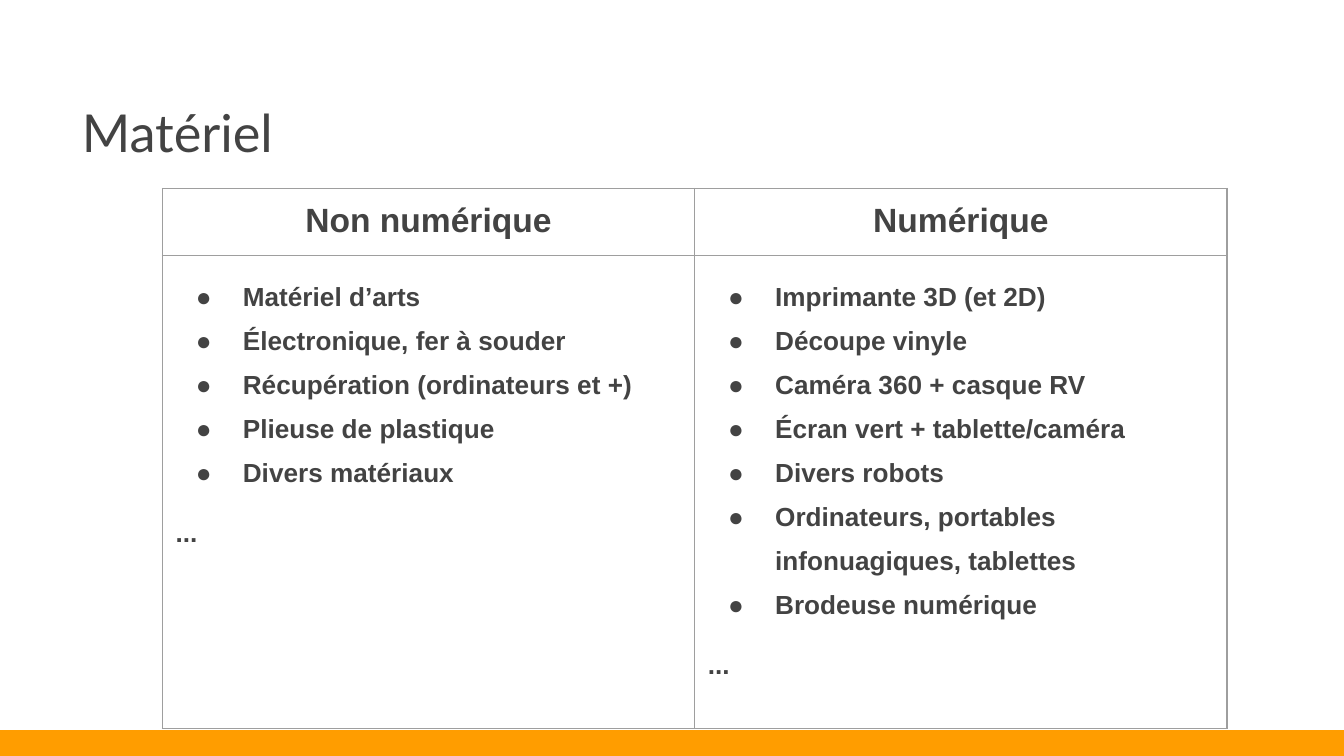
import pptx
import pptx.dml.color
import pptx.enum.shapes
import pptx.enum.text
import pptx.oxml
import pptx.oxml.ns
import pptx.util
from pptx.util import Cm, Pt

TITLE = "Matériel"
TABLE = {
    "Non numérique": [
        "Matériel d’arts",
        "Électronique, fer à souder",
        "Récupération (ordinateurs et +)",
        "Plieuse de plastique",
        "Divers matériaux",
    ],
    "Numérique": [
        "Imprimante 3D (et 2D)",
        "Découpe vinyle",
        "Caméra 360 + casque RV",
        "Écran vert + tablette/caméra",
        "Divers robots",
        "Ordinateurs, portables infonuagiques, tablettes",
        "Brodeuse numérique",
    ],
}
MORE = "..."
INK, GRID, BAND = "434343", "9E9E9E", "FF9D00"
WIDE, HIGH = Cm(25.4), Cm(14.29)
FOOT = Cm(0.49)
COL, ROWS = Cm(10.06), (Cm(1.22), Cm(8.94))
PAD = Cm(0.25)
HEAD = {"name": "Arial", "size": Pt(18), "bold": True}
BODY = {"name": "Arial", "size": Pt(14), "bold": True}
BIG = {"name": "Lato", "size": Pt(28), "bold": False}
INSET = {"margin_left": PAD, "margin_right": PAD,
         "margin_top": PAD, "margin_bottom": PAD}
CENTER = {"alignment": pptx.enum.text.PP_ALIGN.CENTER}
LIST = {"line_spacing": 1.5}
LAST = {"space_before": Pt(16)}


def color(text):
    return pptx.dml.color.RGBColor.from_string(text)


def apply(item, look):
    for name, value in look.items():
        setattr(item, name, value)


def node(xml):
    name = pptx.oxml.ns.nsdecls("a")
    return pptx.oxml.parse_xml(xml.replace(" ", f" {name} ", 1))


def write(para, text, look, form):
    apply(para, form)
    run = para.add_run()
    run.text = text
    apply(run.font, look)
    run.font.color.rgb = color(INK)


def bullet(para):
    prop = para._p.get_or_add_pPr()
    prop.set("marL", str(Cm(1.27)))
    prop.set("indent", str(-Cm(0.89)))
    prop.append(node(f'<a:buClr ><a:srgbClr val="{INK}"/></a:buClr>'))
    prop.append(node('<a:buFont typeface="Arial"/>'))
    prop.append(node('<a:buChar char="●"/>'))


def border(cell):
    prop = cell._tc.get_or_add_tcPr()
    for spot, side in enumerate("LRTB"):
        prop.insert(spot, node(
            f'<a:ln{side} w="{Pt(0.75)}"><a:solidFill>'
            f'<a:srgbClr val="{GRID}"/></a:solidFill></a:ln{side}>'))


def main():
    deck = pptx.Presentation()
    deck.slide_width, deck.slide_height = WIDE, HIGH
    slide = deck.slides.add_slide(deck.slide_layouts[6])
    shapes = slide.shapes

    band = shapes.add_shape(pptx.enum.shapes.MSO_SHAPE.RECTANGLE,
                            0, HIGH - FOOT, WIDE, FOOT)
    band.shadow.inherit = False
    band.fill.solid()
    band.fill.fore_color.rgb = color(BAND)
    band.line.fill.background()

    title = shapes.add_textbox(Cm(1.3), Cm(1.65), Cm(23.67), Cm(1.6))
    frame = title.text_frame
    apply(frame, {"word_wrap": True, **INSET})
    write(frame.paragraphs[0], TITLE, BIG, {})

    table = shapes.add_table(len(ROWS), len(TABLE), Cm(3.07), Cm(3.56),
                             COL * len(TABLE), sum(ROWS)).table
    apply(table, {"first_row": False, "horz_banding": False})
    for row, high in zip(table.rows, ROWS):
        row.height = high
    for col, (head, items) in enumerate(TABLE.items()):
        table.columns[col].width = COL
        top, main_cell = table.cell(0, col), table.cell(1, col)
        for cell in (top, main_cell):
            apply(cell, INSET)
            cell.fill.background()
            border(cell)
        write(top.text_frame.paragraphs[0], head, HEAD, CENTER)
        frame = main_cell.text_frame
        for spot, item in enumerate(items):
            para = frame.add_paragraph() if spot else frame.paragraphs[0]
            bullet(para)
            write(para, item, BODY, LIST)
        write(frame.add_paragraph(), MORE, BODY, LAST)

    deck.save("out.pptx")


if __name__ == "__main__":
    main()
